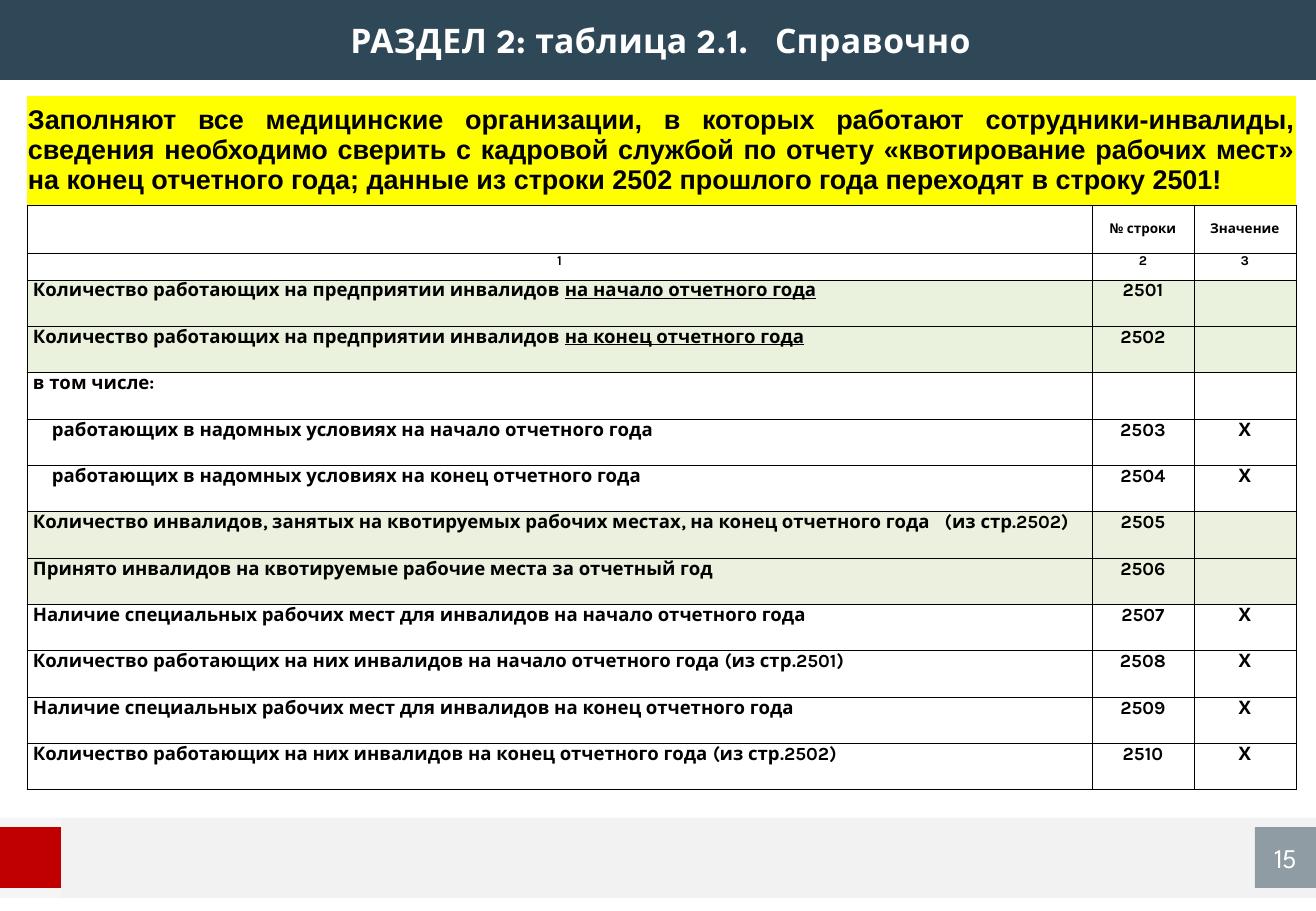
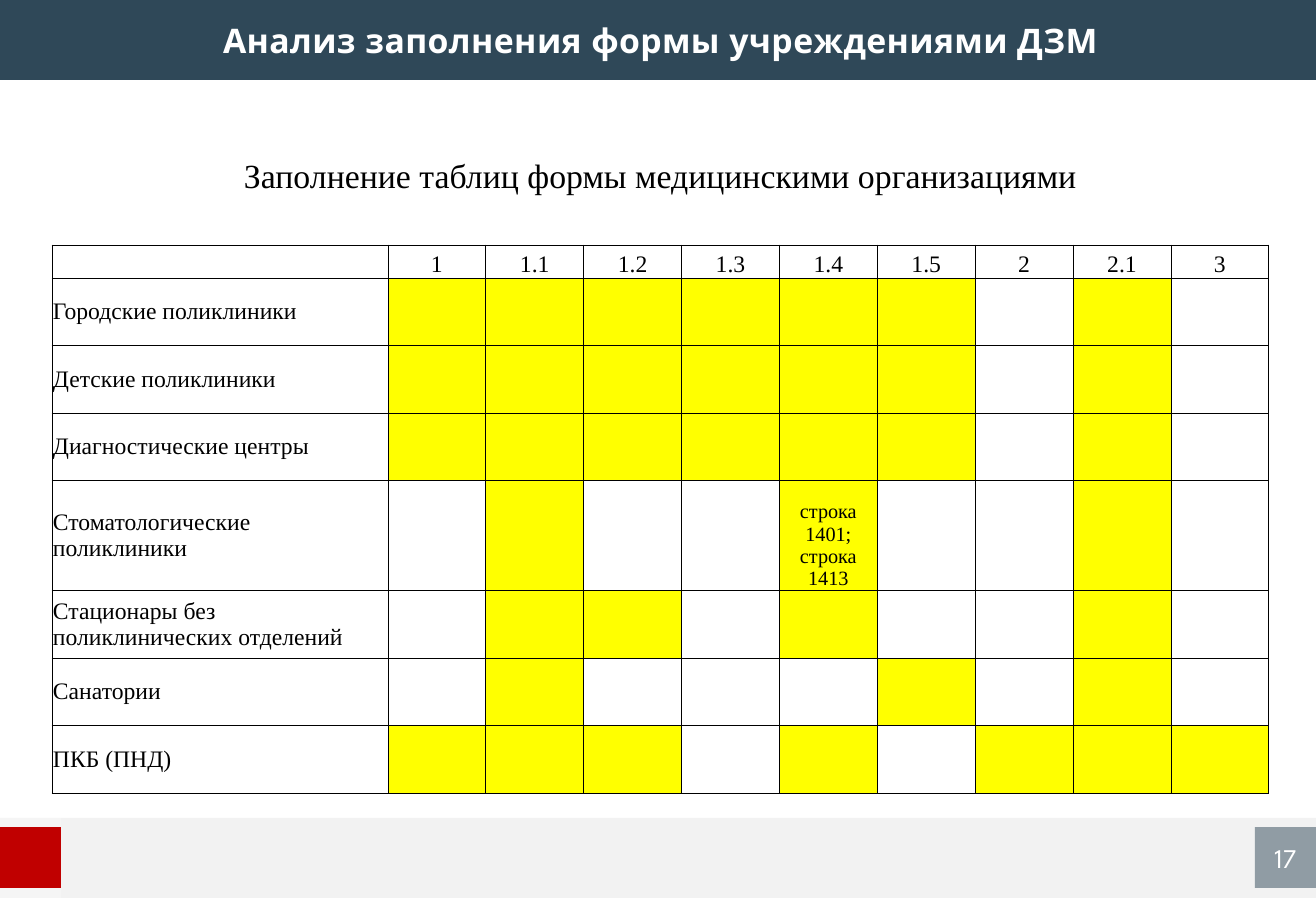
from lxml import etree
from pptx import Presentation
from pptx import util as u
from pptx.dml.color import RGBColor
from pptx.enum import shapes, text
from pptx.oxml.ns import qn

EMU_PER_PX = 7526
WIDTH, HEIGHT = 1316, 911
BAND_H = 80
FOOTER_Y = 818
BADGE_Y, BADGE = 827, 61

NAVY = RGBColor(0x2F, 0x48, 0x58)
RED = RGBColor(0xC0, 0x00, 0x00)
GREY = RGBColor(0xF2, 0xF2, 0xF2)
WHITE = RGBColor(0xFF, 0xFF, 0xFF)
BLACK = RGBColor(0x00, 0x00, 0x00)
YELLOW = RGBColor(0xFF, 0xFF, 0x00)
GREEN = RGBColor(0xEA, 0xF1, 0xDD)
PALE_GREEN = RGBColor(0xEB, 0xF1, 0xDE)

HEAD_FONT = "League Spartan"
ROW_FONT = "Karla"
SERIF = "Times New Roman"

LEFT, CENTER, JUSTIFY = text.PP_ALIGN.LEFT, text.PP_ALIGN.CENTER, text.PP_ALIGN.JUSTIFY
TOP, MIDDLE, BOTTOM = text.MSO_ANCHOR.TOP, text.MSO_ANCHOR.MIDDLE, text.MSO_ANCHOR.BOTTOM

# Text, indent in px, row number, value, fill; "|" starts an underlined or widened piece
DISABLED_ROWS = [
    ("Количество работающих на предприятии инвалидов |на начало отчетного года", 6, "2501", "", GREEN),
    ("Количество работающих на предприятии инвалидов |на конец отчетного года", 6, "2502", "", GREEN),
    ("в том числе:", 6, "", "", None),
    ("работающих в надомных условиях на начало отчетного года", 25, "2503", "Х", None),
    ("работающих в надомных условиях на конец отчетного года", 25, "2504", "Х", None),
    ("Количество инвалидов, занятых на квотируемых рабочих местах, на конец отчетного года"
     "| |(из стр.2502)", 6, "2505", "", PALE_GREEN),
    ("Принято инвалидов на квотируемые рабочие места за отчетный год", 6, "2506", "", PALE_GREEN),
    ("Наличие специальных рабочих мест для инвалидов на начало отчетного года", 6, "2507", "Х", None),
    ("Количество работающих на них инвалидов на начало отчетного года (из стр.2501)", 6, "2508", "Х", None),
    ("Наличие специальных рабочих мест для инвалидов на конец отчетного года", 6, "2509", "Х", None),
    ("Количество работающих на них инвалидов на конец отчетного года (из стр.2502)", 6, "2510", "Х", None),
]

FORM_TABLES = ["1", "1.1", "1.2", "1.3", "1.4", "1.5", "2", "2.1", "3"]
# Organisation and the form tables it fills in
ORGANISATIONS = [
    ("Городские поликлиники", "1 1.1 1.2 1.3 1.4 1.5 2.1"),
    ("Детские поликлиники", "1 1.1 1.2 1.3 1.4 1.5 2.1"),
    ("Диагностические центры", "1 1.1 1.2 1.3 1.4 1.5 2.1"),
    ("Стоматологические поликлиники", "1.1 1.4 2.1"),
    ("Стационары без поликлинических отделений", "1.1 1.2 1.4 2.1"),
    ("Санатории", "1.1 1.5 2.1"),
    ("ПКБ (ПНД)", "1 1.1 1.2 1.4 2 2.1 3"),
]
DENTAL = "Стоматологические поликлиники"


def px(n):
    return u.Emu(n * EMU_PER_PX)


def write(p, content, font, size, color=BLACK, bold=False, align=LEFT, spacing=0):
    """Fill a paragraph; of the pieces split by "|", a space is widened and a second text underlined."""
    p.alignment = align
    pieces = content.split("|")
    for i, piece in enumerate(pieces):
        r = p.add_run()
        r.text = piece
        r.font.name, r.font.size, r.font.bold = font, u.Pt(size), bold
        r.font.color.rgb = color
        if i == 1 and piece != " ":
            r.font.underline = True
        gap = size * 50 if piece == " " else spacing
        if gap:
            r._r.get_or_add_rPr().set("spc", str(gap))


def add_rect(s, x, y, w, h, color, opacity=100):
    sp = s.shapes.add_shape(shapes.MSO_SHAPE.RECTANGLE, px(x), px(y), px(w), px(h))
    sp.shadow.inherit = False
    sp.line.fill.background()
    sp.fill.solid()
    sp.fill.fore_color.rgb = color
    if opacity < 100:
        clr = sp._element.spPr.find(".//" + qn("a:srgbClr"))
        etree.SubElement(clr, qn("a:alpha")).set("val", str(opacity * 1000))
    return sp


def set_margins(box, left=0, right=0):
    box.margin_left, box.margin_right = px(left), px(right)
    box.margin_top = box.margin_bottom = 0


def add_page(prs, title, number):
    """Add a slide with the shared bands, title and page number."""
    s = prs.slides.add_slide(prs.slide_layouts[6])
    add_rect(s, 0, FOOTER_Y, WIDTH, BAND_H, GREY)
    add_rect(s, 0, 0, WIDTH, BAND_H, NAVY)
    add_rect(s, 0, FOOTER_Y, BADGE, BAND_H, WHITE, 30)
    add_rect(s, 0, BADGE_Y, BADGE, BADGE, RED)
    badge = add_rect(s, WIDTH - BADGE, BADGE_Y, BADGE, BADGE, NAVY, 50)
    title_box = s.shapes.add_textbox(px(79), 0, px(1163), px(BAND_H))
    for sp in (badge, title_box):
        tf = sp.text_frame
        tf.word_wrap = True
        tf.vertical_anchor = MIDDLE
        set_margins(tf)
    write(badge.text_frame.paragraphs[0], number, HEAD_FONT, 16, WHITE, align=CENTER)
    write(title_box.text_frame.paragraphs[0], title, HEAD_FONT, 20, WHITE, True, CENTER, spacing=20)
    return s


def set_borders(cell, drawn):
    """Draw the sides in drawn (letters of LRTB) and clear the others."""
    tc_pr = cell._tc.get_or_add_tcPr()
    for i, side in enumerate("LRTB"):
        ln = etree.Element(qn("a:ln" + side), w=str(u.Pt(0.5)))
        if side in drawn:
            fill = etree.SubElement(ln, qn("a:solidFill"))
            etree.SubElement(fill, qn("a:srgbClr")).set("val", str(BLACK))
        else:
            etree.SubElement(ln, qn("a:noFill"))
        tc_pr.insert(i, ln)


def add_grid(s, x, y, widths, heights):
    """Add a bordered, unfilled table whose first row is one merged caption cell."""
    frame = s.shapes.add_table(len(heights), len(widths), px(x), px(y), sum(widths), sum(heights))
    table = frame.table
    table.first_row = table.horz_banding = False
    for col, w in zip(table.columns, widths):
        col.width = w
    for i, (row, h) in enumerate(zip(table.rows, heights)):
        row.height = h
        for cell in row.cells:
            set_margins(cell, 1, 1)
            cell.fill.background()
            set_borders(cell, "LRTB" if i else "B")
    table.cell(0, 0).merge(table.cell(0, len(widths) - 1))
    return table


def set_cell(cell, content, font, size, bold=False, align=CENTER, anchor=TOP, fill=None, indent=1):
    cell.vertical_anchor = anchor
    cell.margin_left = px(indent)
    if fill is not None:
        cell.fill.solid()
        cell.fill.fore_color.rgb = fill
    p = cell.text_frame.paragraphs[0]
    if content:
        write(p, content, font, size, bold=bold, align=align)
    else:
        etree.SubElement(p._p, qn("a:endParaRPr")).set("sz", str(size * 100))


def add_disabled_staff(prs):
    s = add_page(prs, "РАЗДЕЛ 2: таблица 2.1.| |Справочно", "15")
    row_h = px(510) // len(DISABLED_ROWS)
    table = add_grid(s, 27, 96, [px(1065), px(102), px(102)],
                     [px(109), px(48), px(27)] + [row_h] * len(DISABLED_ROWS))
    set_cell(table.cell(0, 0),
             "Заполняют все медицинские организации, в которых работают сотрудники-инвалиды, "
             "сведения необходимо сверить с кадровой службой по отчету «квотирование рабочих мест» "
             "на конец отчетного года; данные из строки 2502 прошлого года переходят в строку 2501!",
             "Arial", 16, True, JUSTIFY, MIDDLE, YELLOW)
    for i, head in enumerate(["", "№ строки", "Значение"]):
        set_cell(table.cell(1, i), head, ROW_FONT, 8, True, anchor=MIDDLE)
        set_cell(table.cell(2, i), str(i + 1), ROW_FONT, 8, True)
    for i, (name, indent, code, value, fill) in enumerate(DISABLED_ROWS, 3):
        set_cell(table.cell(i, 0), name, ROW_FONT, 11, True, LEFT, fill=fill, indent=indent)
        set_cell(table.cell(i, 1), code, ROW_FONT, 11, True, fill=fill)
        set_cell(table.cell(i, 2), value, ROW_FONT, 11, True, fill=fill)


def add_form_analysis(prs):
    s = add_page(prs, "Анализ заполнения формы учреждениями ДЗМ", "17")
    row_h = px(405) // 6
    heights = [px(110) if name == DENTAL else row_h for name, _ in ORGANISATIONS]
    col_w = px(881) // len(FORM_TABLES)
    table = add_grid(s, 52, 109, [px(336)] + [col_w] * len(FORM_TABLES),
                     [px(136), px(33)] + heights)
    set_cell(table.cell(0, 0), "Заполнение таблиц формы медицинскими организациями",
             SERIF, 20, anchor=MIDDLE)
    for j, head in enumerate([""] + FORM_TABLES):
        set_cell(table.cell(1, j), head, SERIF, 14, anchor=BOTTOM)
    for i, (name, filled) in enumerate(ORGANISATIONS, 2):
        set_cell(table.cell(i, 0), name, SERIF, 14, align=LEFT, anchor=MIDDLE)
        for j, number in enumerate(FORM_TABLES, 1):
            note = "строка 1401; строка 1413" if (name, number) == (DENTAL, "1.4") else ""
            fill = YELLOW if number in filled.split() else None
            set_cell(table.cell(i, j), note, SERIF, 12, anchor=BOTTOM, fill=fill)


def main():
    prs = Presentation()
    prs.slide_width, prs.slide_height = px(WIDTH), px(HEIGHT)
    add_disabled_staff(prs)
    add_form_analysis(prs)
    prs.save("out.pptx")


if __name__ == "__main__":
    main()
